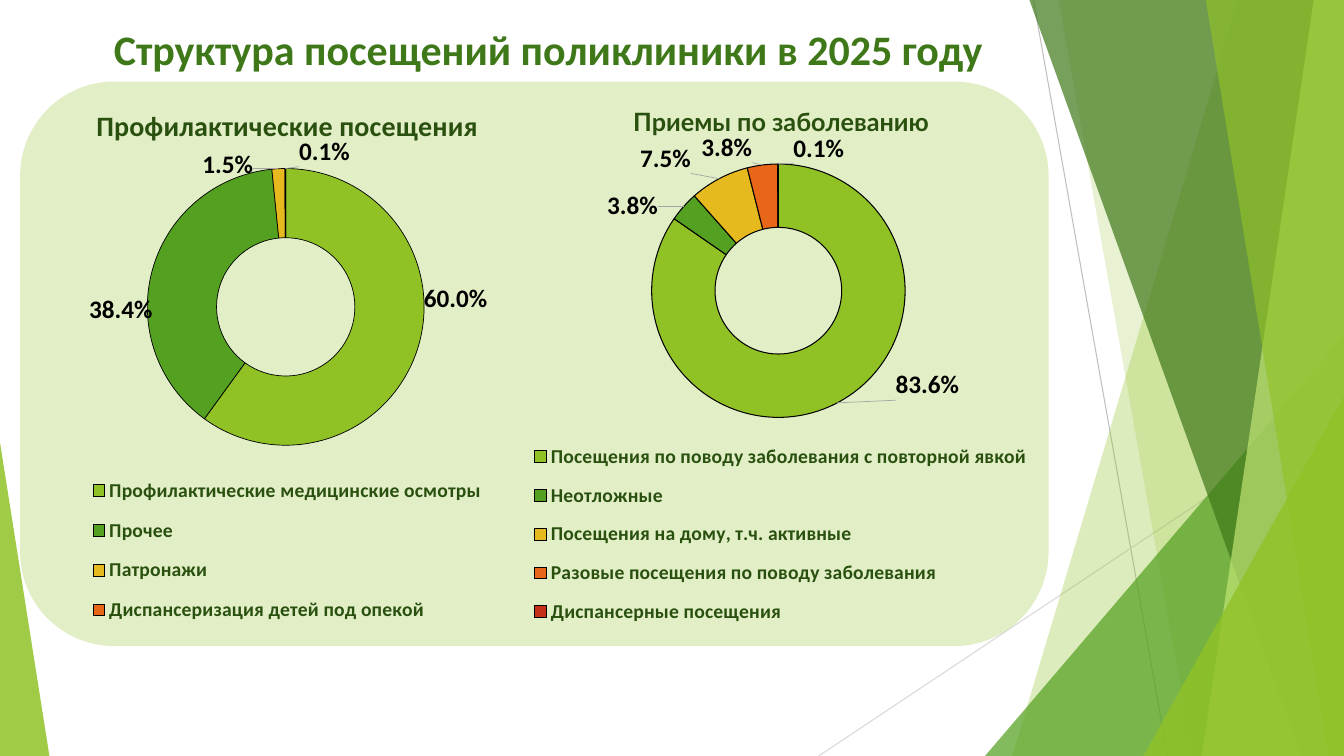
from dataclasses import dataclass
from itertools import accumulate
from math import cos, pi, sin

from pptx import Presentation
from pptx.chart.data import CategoryChartData
from pptx.dml.color import RGBColor
from pptx.enum.chart import XL_CHART_TYPE as CT, XL_LEGEND_POSITION as LP
from pptx.enum.shapes import MSO_CONNECTOR as CON, MSO_SHAPE as SHAPE
from pptx.enum.text import MSO_ANCHOR, MSO_AUTO_SIZE, PP_ALIGN
from pptx.oxml import parse_xml
from pptx.oxml.ns import nsdecls, qn
from pptx.util import Inches, Pt


@dataclass(frozen=True)
class Theme:
    """Colours, fonts and type sizes of the slide."""
    lime: str = "90C226"
    green: str = "54A021"
    forest: str = "3F7819"
    pale: str = "C0E474"
    ink: str = "2A5010"
    black: str = "000000"
    leader: str = "A6A6A6"
    slices: tuple = ("90C226", "54A021", "E6B91E", "E76618", "C42F1A")
    font: str = "Calibri"
    base_font: str = "Lato"
    title: int = 30
    label: int = 18
    legend: int = 14
    base: int = 10


T = Theme()


def set_font(font, size, color, bold=True, name=T.font):
    """Format a font object."""
    font.size, font.bold, font.name = Pt(size), bold, name
    font.color.rgb = RGBColor.from_string(color)


def write(tf, text, align=PP_ALIGN.LEFT, **fmt):
    """Put one formatted paragraph in a text frame."""
    p = tf.paragraphs[0]
    p.alignment = align
    r = p.add_run()
    r.text = text
    set_font(r.font, **fmt)


def paint(sp, color, opacity):
    """Give a shape a see-through fill, no line and no shadow."""
    sp.shadow.inherit = False
    sp.line.fill.background()
    sp.fill.solid()
    sp.fill.fore_color.rgb = RGBColor.from_string(color)
    clr = sp.element.spPr.find(".//" + qn("a:srgbClr"))
    clr.append(parse_xml(f'<a:alpha {nsdecls("a")} val="{opacity * 1000}"/>'))


def add_preset(s, kind, box, color, opacity, adj=None):
    """Add a filled preset shape."""
    sp = s.shapes.add_shape(kind, *map(Inches, box))
    if adj is not None:
        sp.adjustments[0] = adj
    paint(sp, color, opacity)


def add_band(s, top, bottom, color, opacity, width, height):
    """Add a band between a slanted edge and the right side of the slide."""
    fb = s.shapes.build_freeform(Inches(top), 0, 1.0)
    corners = [(width, 0), (width, height), (bottom, height)]
    fb.add_line_segments([(Inches(x), Inches(y)) for x, y in corners])
    paint(fb.convert_to_shape(), color, opacity)


def add_ray(s, ends, color):
    """Add a thin straight line."""
    cn = s.shapes.add_connector(CON.STRAIGHT, *map(Inches, ends))
    cn.line.width = Pt(0.75)
    cn.line.color.rgb = RGBColor.from_string(color)
    cn.element.spPr.append(parse_xml(f'<a:effectLst {nsdecls("a")}/>'))


def add_backdrop(s, width, height):
    """Draw the rays, bands and triangles along the slide edges."""
    add_ray(s, (10.25, 0, 11.58, height), "BFBFBF")
    add_ray(s, (width, 4.03, 8.12, height), "D9D9D9")

    def triangle(left, top, w, color, opacity, adj):
        add_preset(s, SHAPE.ISOSCELES_TRIANGLE, (left, top, w, height - top), color, opacity, adj)

    def bands(*rows):
        for row in rows:
            add_band(s, *row, width, height)

    bands((12.28, 10.04, T.lime, 30), (10.5, 11.83, T.lime, 20))
    triangle(9.77, 3.33, 3.56, T.green, 72, 1)
    bands((10.21, 12.91, T.forest, 70), (13.03, 11.92, T.pale, 70),
          (11.96, 13.18, T.lime, 65))
    triangle(11.34, 3.93, 1.99, T.lime, 80, 1)
    triangle(0, 4.39, 0.49, T.lime, 85, 0)


def add_title(s, box, text):
    """Place the slide heading in the title placeholder."""
    sp = s.shapes.title
    sp.left, sp.top, sp.width, sp.height = map(Inches, box)
    tf = sp.text_frame
    tf.word_wrap, tf.auto_size = True, MSO_AUTO_SIZE.NONE
    tf.vertical_anchor = MSO_ANCHOR.MIDDLE
    write(tf, text, size=T.title, color=T.forest)


def set_layout(parent, after, **values):
    """Set a manual chart layout behind the named child, or first."""
    for old in parent.findall(qn("c:layout")):
        parent.remove(old)
    tags = "".join(f'<c:{k} val="{v}"/>' for k, v in values.items())
    layout = parse_xml(f'<c:layout {nsdecls("c")}><c:manualLayout>{tags}'
                       '</c:manualLayout></c:layout>')
    if after:
        parent.find(qn(after)).addnext(layout)
    else:
        parent.insert(0, layout)


def frame(x, y, w=None, h=None):
    """Return layout values measured from the chart's corner."""
    modes = dict(xMode="edge", yMode="edge", x=x, y=y)
    return modes | (dict(w=w, h=h) if w else {})


def place_labels(ser, values, box, ring, targets):
    """Move each value label from the middle of its slice to its target."""
    left, top, width, height = box
    cx, cy = left + (ring[0] + ring[2] / 2) * width, top + (ring[1] + ring[3] / 2) * height
    radius = 0.75 * ring[2] * width / 2
    labels = ser.data_labels
    labels.show_value, labels.number_format = True, "0.0%"
    labels.number_format_is_linked = False
    set_font(labels.font, T.label, T.black)
    for i, (value, end, (x, y)) in enumerate(zip(values, accumulate(values), targets)):
        angle = 2 * pi * (end - value / 2) / sum(values)
        set_font(ser.points[i].data_label.font, T.label, T.black)
        dlbl = labels._element.findall(qn("c:dLbl"))[i]
        set_layout(dlbl, "c:idx",
                   x=round((x - cx - radius * sin(angle)) / width, 3),
                   y=round((y - cy + radius * cos(angle)) / height, 3))
    labels._element.append(parse_xml(
        f'<c:leaderLines {nsdecls("c", "a")}><c:spPr><a:ln w="6350"><a:solidFill>'
        f'<a:srgbClr val="{T.leader}"/></a:solidFill></a:ln></c:spPr></c:leaderLines>'))


def add_doughnut(s, box, title, title_font, title_at, legend_box, ring, line, rows):
    """Add a doughnut chart with title, legend and placed labels."""
    names, values, targets = zip(*rows)
    data = CategoryChartData(number_format="0.0%")
    data.categories = names
    data.add_series("Series 1", values)
    chart = s.shapes.add_chart(CT.DOUGHNUT, *map(Inches, box), data).chart
    set_font(chart.font, T.base, T.black, False, T.base_font)
    write(chart.chart_title.text_frame, title, PP_ALIGN.CENTER, color=T.ink, **title_font)
    chart.has_legend = True
    chart.legend.position, chart.legend.include_in_layout = LP.BOTTOM, False
    set_font(chart.legend.font, T.legend, T.ink)
    plot = chart.plots[0]
    plot.vary_by_categories = True
    ser = plot.series[0]
    for i, color in enumerate(T.slices[:len(values)]):
        fmt = ser.points[i].format
        fmt.fill.solid()
        fmt.fill.fore_color.rgb = RGBColor.from_string(color)
        fmt.line.width = Pt(line)
        fmt.line.color.rgb = RGBColor.from_string(T.black)
    place_labels(ser, values, box, ring, targets)
    root = chart.element.find(qn("c:chart"))
    area = root.find(qn("c:plotArea"))
    area.find(".//" + qn("c:holeSize")).set("val", "66")
    set_layout(root.find(qn("c:title")), "c:tx", **frame(*title_at))
    set_layout(root.find(qn("c:legend")), "c:legendPos", **frame(*legend_box))
    set_layout(area, None, layoutTarget="inner", **frame(*ring))
    clear = f'<c:spPr {nsdecls("c", "a")}><a:noFill/><a:ln><a:noFill/></a:ln></c:spPr>'
    area.append(parse_xml(clear))
    root.addnext(parse_xml(clear))


def main():
    """Build and save the slide."""
    width, height = 13.33, 7.5
    prs = Presentation()
    prs.slide_width, prs.slide_height = Inches(width), Inches(height)
    s = prs.slides.add_slide(prs.slide_layouts[5])
    add_backdrop(s, width, height)
    add_preset(s, SHAPE.ROUNDED_RECTANGLE, (0.2, 0.81, 10.2, 5.6), T.lime, 26)
    add_title(s, (1.03, 0.18, 9.09, 0.61), "Структура посещений поликлиники в 2025 году")
    add_doughnut(
        s, (0.2, 0.83, 5.3, 5.58), "Профилактические посещения", dict(size=20), (0.133, 0.03),
        (0.12, 0.675, 0.76, 0.31), (0.238, 0.151, 0.518, 0.492), 0.5,
        [("Профилактические медицинские осмотры", 0.6, (4.52, 2.97)),
         ("Прочее", 0.384, (1.2, 3.07)),
         ("Патронажи", 0.015, (2.26, 1.64)),
         ("Диспансеризация детей под опекой", 0.001, (3.22, 1.5))])
    add_doughnut(
        s, (5.1, 0.81, 5.3, 5.6), "Приемы по заболеванию",
        dict(size=18, name=T.base_font), (0.214, 0.03),
        (0.024, 0.617, 0.95, 0.37), (0.257, 0.146, 0.475, 0.449), 0.75,
        [("Посещения по поводу заболевания с повторной явкой", 0.836, (9.2, 3.82)),
         ("Неотложные", 0.038, (6.27, 2.04)),
         ("Посещения на дому, т.ч. активные", 0.075, (6.6, 1.57)),
         ("Разовые посещения по поводу заболевания", 0.038, (7.21, 1.46)),
         ("Диспансерные посещения", 0.001, (8.12, 1.47))])
    prs.save("out.pptx")


if __name__ == "__main__":
    main()
